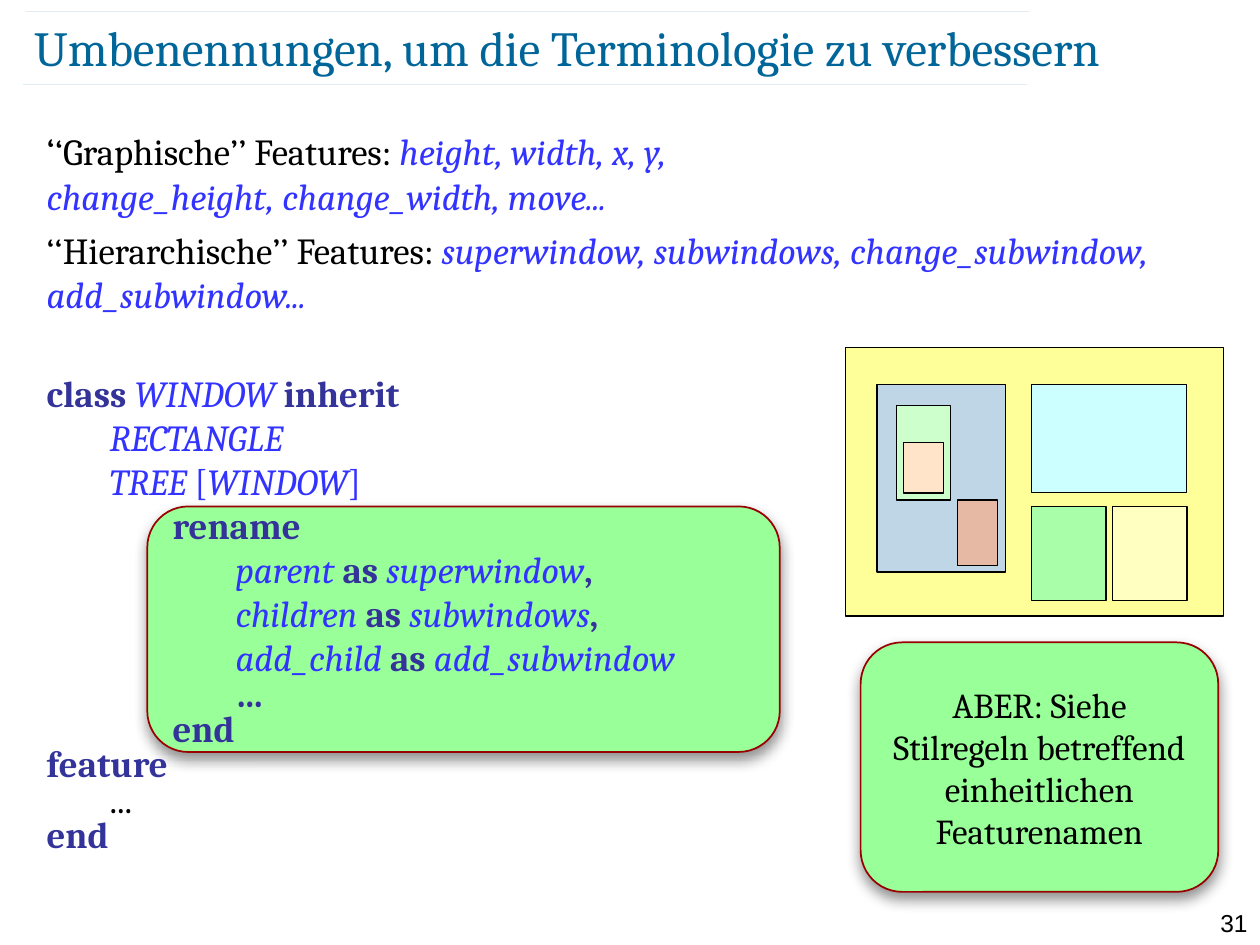
from lxml.etree import SubElement
from pptx import Presentation
from pptx.dml.color import RGBColor
from pptx.enum.shapes import MSO_CONNECTOR, MSO_SHAPE
from pptx.enum.text import MSO_ANCHOR, PP_ALIGN
from pptx.oxml.ns import qn
from pptx.util import Cm, Pt

LOOKS = {
    "plain": {"color": "000000", "bold": False, "italic": False},
    "key": {"color": "333399", "bold": True, "italic": False},
    "name": {"color": "3333FF", "bold": False, "italic": True},
    "mark": {"color": "3333FF", "bold": False, "italic": False},
}
STEP = 1.27


def paint(color, code):
    color.rgb = RGBColor.from_string(code)


def child(node, tag, **values):
    return SubElement(node, qn(tag), {k: str(v) for k, v in values.items()})


class Deck:
    """Draws styled elements on the current slide."""

    face = "Cambria"

    def __init__(self, wide, high):
        self.show = Presentation()
        self.show.slide_width, self.show.slide_height = Cm(wide), Cm(high)
        self.slide = self.show.slides.add_slide(self.show.slide_layouts[6])

    def rule(self, x, y, wide):
        ends = [Cm(v) for v in (x, y, x + wide, y)]
        line = self.slide.shapes.add_connector(MSO_CONNECTOR.STRAIGHT, *ends)
        line.line.width = Pt(0.1)
        paint(line.line.color, "006699")
        tint = line._element.spPr.find(".//" + qn("a:srgbClr"))
        child(tint, "a:alpha", val=35000)
        child(line._element.spPr, "a:effectLst")

    def block(self, spot, fill, kind=MSO_SHAPE.RECTANGLE, edge="000000", width=0.75):
        shape = self.slide.shapes.add_shape(kind, *map(Cm, spot))
        shape.shadow.inherit = False
        shape.fill.solid()
        paint(shape.fill.fore_color, fill)
        paint(shape.line.color, edge)
        shape.line.width = Pt(width)
        return shape

    def card(self, spot):
        shape = self.block(spot, "99FF99", MSO_SHAPE.ROUNDED_RECTANGLE, "990000", 1)
        glow = child(shape._element.spPr.find(qn("a:effectLst")), "a:outerShdw",
                     blurRad=Pt(8), dist=Pt(4), dir=5400000, rotWithShape=0)
        tint = child(glow, "a:srgbClr", val="000000")
        child(tint, "a:alpha", val=43000)
        return shape

    def box(self, spot, **values):
        frame = self.slide.shapes.add_textbox(*map(Cm, spot)).text_frame
        for key, value in {"word_wrap": True, **values}.items():
            setattr(frame, key, value)
        return frame

    def label(self, para, text, size, color="000000", face=None, **values):
        run = para.add_run()
        run.text = text
        form = {"size": Pt(size), "name": face or self.face, **values}
        for key, value in form.items():
            setattr(run.font, key, value)
        paint(run.font.color, color)

    def rows(self, frame, rows):
        for num, (level, gap, pitch, runs) in enumerate(rows):
            para = frame.add_paragraph() if num else frame.paragraphs[0]
            form = {"space_before": Pt(gap), "line_spacing": pitch}
            for key, value in form.items():
                setattr(para, key, value)
            para._p.get_or_add_pPr().set("marL", str(Cm(level * STEP)))
            for look, text, *size in runs:
                if look == "break":
                    para.add_line_break()
                else:
                    self.label(para, text, *(size or [21]), **LOOKS[look])


def pair(old, new, *tail):
    return 3, 0, 1.0, [("name", old + " "), ("key", "as "), ("name", new), *tail]


PANES = [
    ((17.04, 7.01, 7.62, 5.41), "FFFF99"),
    ((17.68, 7.75, 2.59, 3.78), "BED6E6"),
    ((18.08, 8.18, 1.09, 1.9), "CCFFCC"),
    ((18.21, 8.92, 0.81, 1.02), "FFE4C9"),
    ((19.3, 10.08, 0.81, 1.32), "E5B9A3"),
    ((20.8, 7.75, 3.12, 2.18), "CCFFFF"),
    ((20.8, 10.21, 1.5, 1.9), "A9FFA9"),
    ((22.43, 10.21, 1.5, 1.9), "FFFFC1"),
]
COMMA = ("key", ",")
ROWS = [
    (0, 0, 1.0, [("plain", "‘", 22), ("plain", "‘Graphische’’ Features: "),
                 ("name", "height, width, x, y,"), ("break", ""),
                 ("name", "change_height, change_width, move...")]),
    (0, 6, 1.0, [("plain", "‘‘Hierarchische’’ Features: "),
                 ("name", "superwindow, subwindows, change_subwindow, add_subwindow...")]),
    (0, 31, 1.0, [("key", "class "), ("name", "WINDOW "), ("key", "inherit")]),
    (1, 0, 1.0, [("name", "RECTANGLE")]),
    (1, 0, 1.0, [("name", "TREE "), ("mark", "["), ("name", "WINDOW"), ("mark", "]")]),
    (2, 0, 1.0, [("key", "rename")]),
    pair("parent", "superwindow", COMMA),
    pair("children", "subwindows", COMMA),
    pair("add_child", "add_subwindow"),
    (3, 0, 0.8, [("key", "…")]),
    (2, 0, 0.8, [("key", "end")]),
    (0, 0, 0.8, [("key", "feature")]),
    (1, 0, 0.8, [("plain", "...")]),
    (0, 0, 0.8, [("key", "end")]),
]


def main():
    deck = Deck(25.4, 19.05)
    deck.rule(0.46, 1.7, 20.24)
    deck.rule(0.51, 0.23, 20.24)

    page = deck.box((24, 18.19, 1.4, 0.61)).paragraphs[0]
    page.alignment = PP_ALIGN.RIGHT
    deck.label(page, "31", 14, face="Arial")

    deck.card((2.97, 10.21, 12.75, 4.95))
    flush = dict.fromkeys(("margin_left", "margin_top", "margin_right", "margin_bottom"), 0)
    title = deck.box((0.69, 0.33, 23.52, 1.22), vertical_anchor=MSO_ANCHOR.MIDDLE, **flush)
    deck.label(title.paragraphs[0], "Umbenennungen, um die Terminologie zu verbessern",
               28, "006699")
    deck.rows(deck.box((0.69, 2.44, 23.88, 15.67)), ROWS)

    for spot, fill in PANES:
        deck.block(spot, fill)

    note = deck.card((17.35, 12.95, 7.21, 5.03)).text_frame
    note.word_wrap, note.vertical_anchor = True, MSO_ANCHOR.MIDDLE
    note.paragraphs[0].alignment = PP_ALIGN.CENTER
    deck.label(note.paragraphs[0],
               "ABER: Siehe Stilregeln betreffend einheitlichen Featurenamen", 20)
    deck.show.save("out.pptx")


if __name__ == "__main__":
    main()
